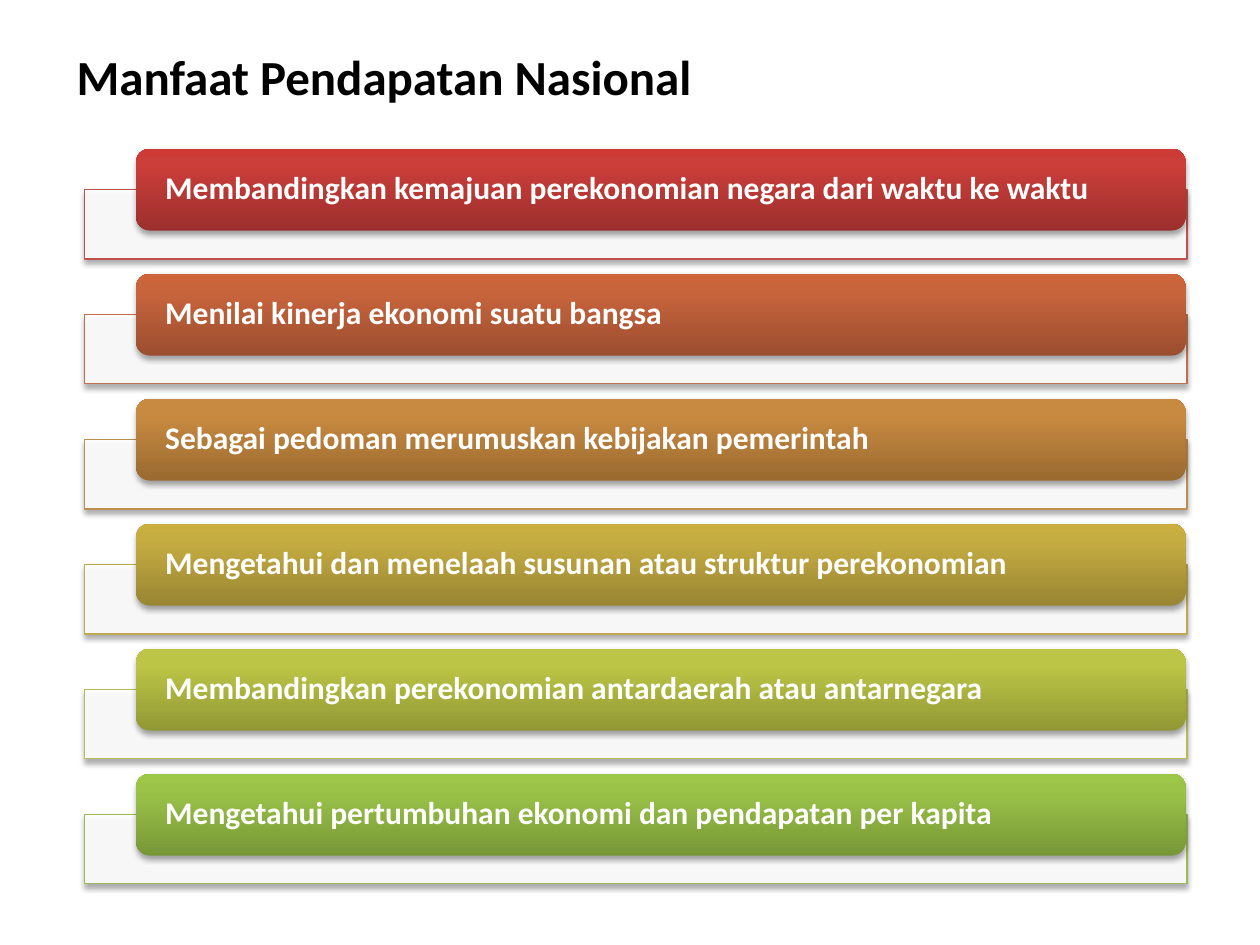
from lxml.etree import SubElement
from pptx import Presentation
from pptx.dml.color import RGBColor
from pptx.enum.shapes import MSO_SHAPE as Shape
from pptx.enum.text import MSO_ANCHOR as Anchor, PP_ALIGN as Align
from pptx.oxml.ns import qn
from pptx.util import Inches, Pt

TITLE = "Manfaat Pendapatan Nasional"
# Benefit, frame line, gradient from bottom to top
BENEFITS = [
    ("Membandingkan kemajuan perekonomian negara dari waktu ke waktu",
     "C0504D", ("9C2F2D", "CB3E3A", "CE3B37")),
    ("Menilai kinerja ekonomi suatu bangsa",
     "BF6F4F", ("9B4E2F", "C9653D", "CD643A")),
    ("Sebagai pedoman merumuskan kebijakan pemerintah",
     "BE8D52", ("9A6A31", "C88A40", "CB8B3D")),
    ("Mengetahui dan menelaah susunan atau struktur perekonomian",
     "BDA954", ("998533", "C6AD42", "CAAF40")),
    ("Membandingkan perekonomian antardaerah atau antarnegara",
     "B5BC57", ("919835", "BCC545", "BFC843")),
    ("Mengetahui pertumbuhan ekonomi dan pendapatan per kapita",
     "9BBB59", ("779737", "9BC348", "9DC746")),
]
COLORS = {"title": "000000", "label": "FFFFFF", "frame": "FFFFFF", "shadow": "000000"}
GRADIENT_STOPS = (0, 80, 100)

# Row layout, in inches
FIRST_TOP, LAST_TOP = 1.18, 6.14
PITCH = (LAST_TOP - FIRST_TOP) / (len(BENEFITS) - 1)
BAR_LEFT, BAR_WIDTH, BAR_HEIGHT = 1.08, 8.33, 0.65
FRAME_LEFT, FRAME_WIDTH, FRAME_HEIGHT = 0.67, 8.75, 0.55


def write(shape, text, size, color, inset=0.1, line_spacing=1.0):
    frame = shape.text_frame
    frame.word_wrap = True
    frame.vertical_anchor = Anchor.MIDDLE
    frame.margin_left = frame.margin_right = Inches(inset)
    frame.margin_top = frame.margin_bottom = 0
    paragraph = frame.paragraphs[0]
    paragraph.alignment = Align.LEFT
    paragraph.line_spacing = line_spacing
    run = paragraph.add_run()
    run.text = text
    run.font.name, run.font.size, run.font.bold = "Calibri", Pt(size), True
    run.font.color.rgb = RGBColor.from_string(color)


def add_color(parent, color, opacity=100):
    element = SubElement(parent, qn("a:srgbClr"), val=color)
    if opacity < 100:
        SubElement(element, qn("a:alpha"), val=str(opacity * 1000))


def add_shadow(shape):
    shape.shadow.inherit = False
    effects = shape._element.spPr.find(qn("a:effectLst"))
    shadow = SubElement(effects, qn("a:outerShdw"), blurRad=str(Pt(3.1)),
                        dist=str(Pt(1.8)), dir="5400000", rotWithShape="0")
    add_color(shadow, COLORS["shadow"], 35)


def fill_gradient(shape, colors):
    shape.fill.gradient()
    shape.fill.gradient_angle = 90
    stops = shape._element.spPr.find(".//" + qn("a:gsLst"))
    for stop in list(stops):
        stops.remove(stop)
    for position, color in zip(GRADIENT_STOPS, colors):
        add_color(SubElement(stops, qn("a:gs"), pos=str(position * 1000)), color)


prs = Presentation()
prs.slide_width, prs.slide_height = Inches(10), Inches(7.5)
slide = prs.slides.add_slide(prs.slide_layouts[6])

# Title
title = slide.shapes.add_textbox(Inches(0.51), Inches(0.3), Inches(9), Inches(0.61))
write(title, TITLE, 28, COLORS["title"])

# Benefit rows: an outlined frame behind a gradient bar
for index, (benefit, line_color, gradient) in enumerate(BENEFITS):
    top = FIRST_TOP + index * PITCH

    frame = slide.shapes.add_shape(
        Shape.RECTANGLE, Inches(FRAME_LEFT), Inches(top + BAR_HEIGHT / 2),
        Inches(FRAME_WIDTH), Inches(FRAME_HEIGHT))
    frame.fill.solid()
    frame.fill.fore_color.rgb = RGBColor.from_string(COLORS["frame"])
    fill_color = frame._element.spPr.find(qn("a:solidFill"))[0]
    SubElement(fill_color, qn("a:alpha"), val="90000")
    frame.line.color.rgb = RGBColor.from_string(line_color)
    frame.line.width = Pt(0.75)
    add_shadow(frame)

    bar = slide.shapes.add_shape(
        Shape.ROUNDED_RECTANGLE, Inches(BAR_LEFT), Inches(top),
        Inches(BAR_WIDTH), Inches(BAR_HEIGHT))
    fill_gradient(bar, gradient)
    bar.line.fill.background()
    add_shadow(bar)
    write(bar, benefit, 18, COLORS["label"], inset=0.2, line_spacing=0.9)

prs.save("out.pptx")
